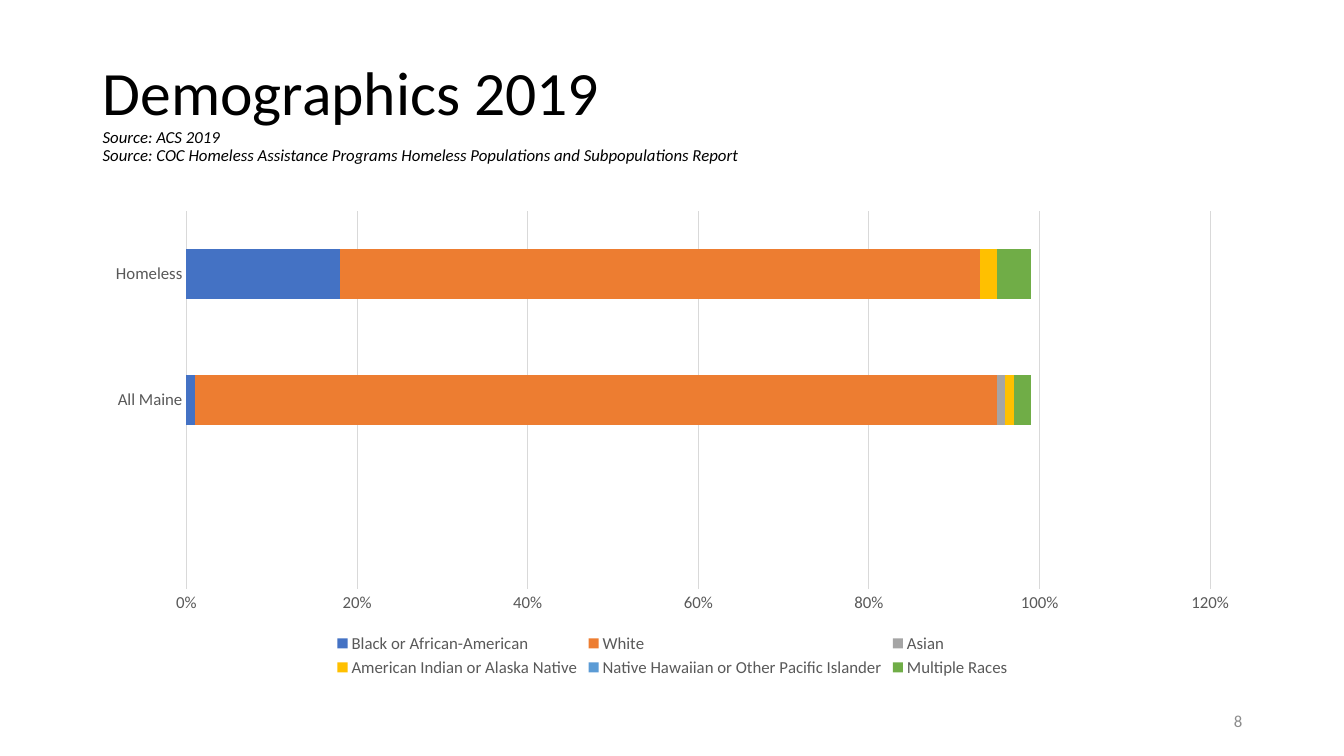
from dataclasses import dataclass

from pptx import Presentation
from pptx.chart.data import CategoryChartData
from pptx.dml.color import RGBColor
from pptx.enum.chart import XL_CHART_TYPE, XL_LEGEND_POSITION, XL_TICK_MARK
from pptx.enum.text import MSO_ANCHOR, PP_ALIGN
from pptx.util import Inches, Pt


@dataclass(frozen=True)
class Theme:
    font: str = "Calibri"
    title_size: int = 44
    small_size: int = 12
    ink: str = "000000"
    label: str = "595959"
    grid: str = "D9D9D9"
    number: str = "8C8C8C"
    series: tuple = ("4472C4", "ED7D31", "A5A5A5", "FFC000", "5B9BD5", "70AD47")


theme = Theme()


def set_font(font, size, color, italic=False):
    font.name = theme.font
    font.size = Pt(size)
    font.italic = italic
    font.color.rgb = RGBColor.from_string(color)


def add_box(left, top, width, height):
    """Add a wrapping, vertically centred text box and return its first paragraph."""
    box = page.shapes.add_textbox(Inches(left), Inches(top), Inches(width), Inches(height))
    box.text_frame.word_wrap = True
    box.text_frame.vertical_anchor = MSO_ANCHOR.MIDDLE
    return box.text_frame.paragraphs[0]


deck = Presentation()
deck.slide_width, deck.slide_height = Inches(13.33), Inches(7.5)
page = deck.slides.add_slide(deck.slide_layouts[6])

# Title and sources
para = add_box(0.92, 0.4, 11.5, 1.45)
para.line_spacing = 0.9
span = para.add_run()
span.text = "Demographics 2019"
set_font(span.font, theme.title_size, theme.ink)
for source in (
    "Source: ACS 2019",
    "Source: COC Homeless Assistance Programs Homeless Populations and Subpopulations Report",
):
    para.add_line_break()
    span = para.add_run()
    span.text = source
    set_font(span.font, theme.small_size, theme.ink, italic=True)

# Stacked bars by race
shares = {
    "Black or African-American": (None, 0.01, 0.18),
    "White": (None, 0.94, 0.75),
    "Asian": (None, 0.01, 0),
    "American Indian or Alaska Native": (None, 0.01, 0.02),
    "Native Hawaiian or Other Pacific Islander": (None, 0, 0),
    "Multiple Races": (None, 0.02, 0.04),
}
data = CategoryChartData(number_format="0%")
data.categories = ["", "All Maine", "Homeless"]
for race, values in shares.items():
    data.add_series(race, values)

chart = page.shapes.add_chart(
    XL_CHART_TYPE.BAR_STACKED, Inches(0.92), Inches(2), Inches(11.5), Inches(4.76), data
).chart
set_font(chart.font, theme.small_size, theme.label)
chart.has_title = False
chart.has_legend = True
chart.legend.position = XL_LEGEND_POSITION.BOTTOM
chart.legend.include_in_layout = False
set_font(chart.legend.font, theme.small_size, theme.label)

plot = chart.plots[0]
plot.gap_width = 150
plot.overlap = 100
plot.vary_by_categories = False
for series, color in zip(plot.series, theme.series):
    series.format.fill.solid()
    series.format.fill.fore_color.rgb = RGBColor.from_string(color)

category_axis, value_axis = chart.category_axis, chart.value_axis
for axis in (category_axis, value_axis):
    axis.major_tick_mark = axis.minor_tick_mark = XL_TICK_MARK.NONE
    set_font(axis.tick_labels.font, theme.small_size, theme.label)
value_axis.minimum_scale = 0
value_axis.maximum_scale = 1.2
value_axis.major_unit = 0.2
value_axis.tick_labels.number_format = "0%"
value_axis.tick_labels.number_format_is_linked = False
value_axis.has_major_gridlines = True
value_axis.format.line.fill.background()
for line in (category_axis.format.line, value_axis.major_gridlines.format.line):
    line.color.rgb = RGBColor.from_string(theme.grid)
    line.width = Pt(0.75)

# Page number
para = add_box(9.42, 6.95, 3, 0.4)
para.alignment = PP_ALIGN.RIGHT
span = para.add_run()
span.text = "8"
set_font(span.font, theme.small_size, theme.number)

deck.save("out.pptx")
